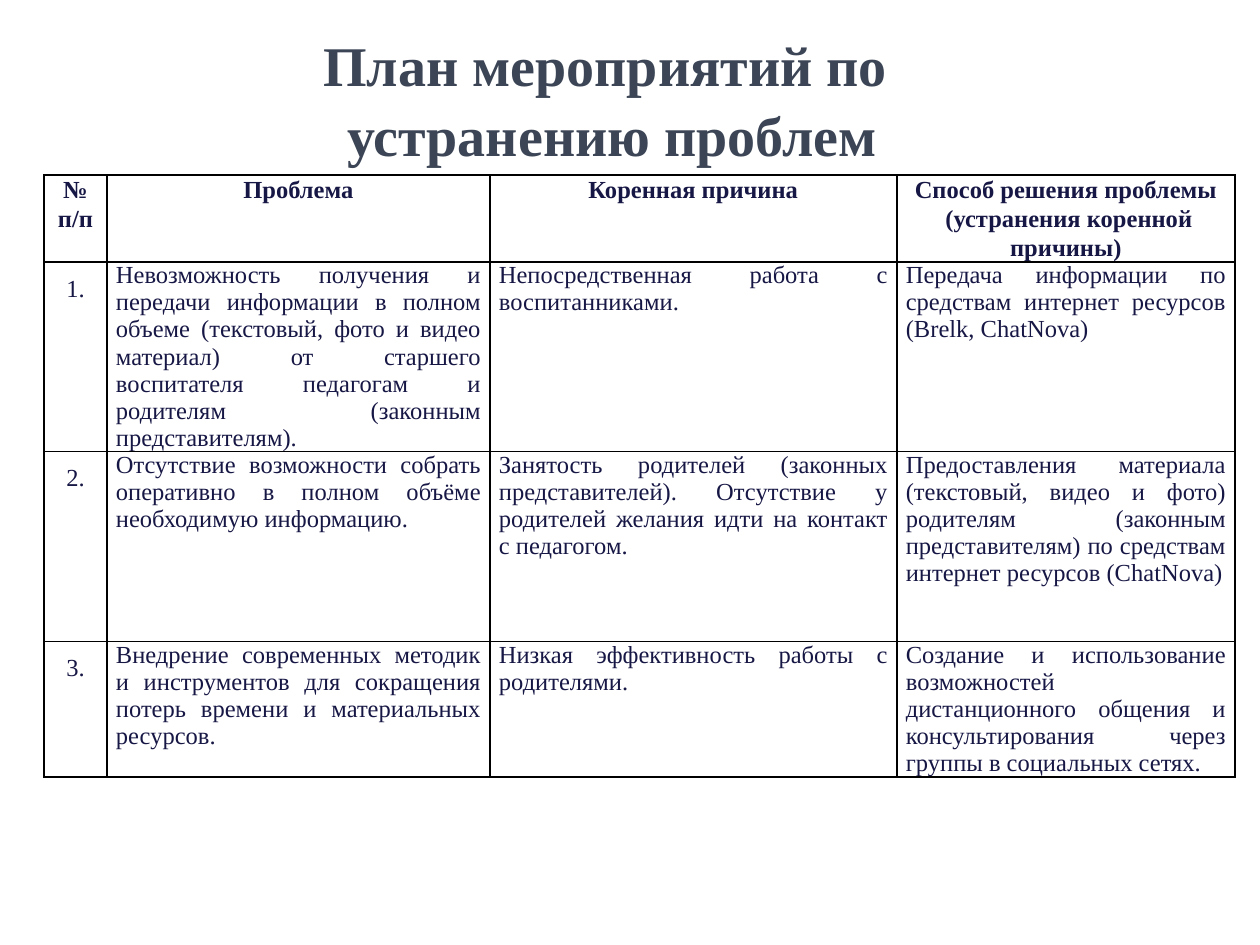
"""Build the slide with the action plan for solving problems."""
from dataclasses import dataclass

import pptx
import pptx.dml.color
import pptx.enum.text
import pptx.oxml
import pptx.oxml.ns
import pptx.util

ALIGN = pptx.enum.text.PP_ALIGN
ANCHOR = pptx.enum.text.MSO_ANCHOR
EMU_PER_PX = 914400 // 126


@dataclass(frozen=True)
class Theme:
    font: str = "Times New Roman"
    heading: str = "3B4555"
    ink: str = "171745"
    border: str = "000000"
    heading_pt: int = 32
    table_pt: int = 14
    border_pt: int = 1


@dataclass(frozen=True)
class CellStyle:
    align: ALIGN
    spacing: float
    bold: bool = False


@dataclass(frozen=True)
class Measure:
    height: int
    problem: str
    cause: str
    solution: str


THEME = Theme()
HEADER = CellStyle(ALIGN.CENTER, 1.07, True)
NUMBER = CellStyle(ALIGN.CENTER, 1.5)
BODY = CellStyle(ALIGN.JUSTIFY, 1.0)
COLUMN_WIDTHS = (63, 383, 407, 338)
HEADER_HEIGHT = 87
HEADINGS = (
    "№ п/п",
    "Проблема",
    "Коренная причина",
    "Способ решения проблемы\n (устранения коренной причины)",
)
MEASURES = (
    Measure(
        189,
        "Невозможность получения и передачи информации в полном объеме "
        "(текстовый, фото и видео материал) от старшего воспитателя "
        "педагогам и родителям (законным представителям).",
        "Непосредственная работа с воспитанниками.",
        "Передача информации по средствам интернет ресурсов (Brelk, ChatNova)",
    ),
    Measure(
        190,
        "Отсутствие возможности собрать оперативно в полном объёме "
        "необходимую информацию.",
        "Занятость родителей (законных представителей). Отсутствие у "
        "родителей желания идти на контакт с педагогом.",
        "Предоставления материала (текстовый, видео и фото) родителям "
        "(законным представителям) по средствам интернет ресурсов (ChatNova)",
    ),
    Measure(
        135,
        "Внедрение современных методик и инструментов для сокращения потерь "
        "времени и материальных ресурсов.",
        "Низкая эффективность работы с родителями.",
        "Создание и использование возможностей дистанционного общения и "
        "консультирования через группы в социальных сетях.",
    ),
)


def px(length: int) -> pptx.util.Emu:
    return pptx.util.Emu(length * EMU_PER_PX)


def add_run(paragraph, text: str, size: int, color: str, bold: bool) -> None:
    run = paragraph.add_run()
    run.text = text
    run.font.name = THEME.font
    run.font.size = pptx.util.Pt(size)
    run.font.bold = bold
    run.font.color.rgb = pptx.dml.color.RGBColor.from_string(color)


def draw_title(slide, lines: tuple[str, ...]) -> None:
    title = slide.shapes.title
    title.left, title.top, title.width, title.height = px(174), px(16), px(863), px(129)
    frame = title.text_frame
    frame.word_wrap = False
    frame.auto_size = pptx.enum.text.MSO_AUTO_SIZE.NONE
    frame.vertical_anchor = ANCHOR.TOP
    frame.margin_top, frame.margin_bottom = px(11), 0
    heading = frame.paragraphs[0]
    heading.alignment = ALIGN.CENTER
    heading.line_spacing = 1.05
    for index, line in enumerate(lines):
        if index:
            heading.add_line_break()
        add_run(heading, line, THEME.heading_pt, THEME.heading, True)


def draw_borders(cell) -> None:
    properties = cell._tc.get_or_add_tcPr()
    width = pptx.util.Pt(THEME.border_pt)
    for index, side in enumerate(("lnL", "lnR", "lnT", "lnB")):
        border = pptx.oxml.parse_xml(
            f'<a:{side} {pptx.oxml.ns.nsdecls("a")} w="{width}"><a:solidFill>'
            f'<a:srgbClr val="{THEME.border}"/></a:solidFill></a:{side}>'
        )
        properties.insert(index, border)


def fill_cell(cell, text: str, style: CellStyle) -> None:
    cell.fill.background()
    cell.margin_left = cell.margin_right = px(9)
    cell.margin_top = cell.margin_bottom = 0
    cell.vertical_anchor = ANCHOR.TOP
    frame = cell.text_frame
    for index, line in enumerate(text.split("\n")):
        paragraph = frame.add_paragraph() if index else frame.paragraphs[0]
        paragraph.alignment = style.align
        paragraph.line_spacing = style.spacing
        add_run(paragraph, line, THEME.table_pt, THEME.ink, style.bold)
    draw_borders(cell)


def draw_plan(slide) -> None:
    heights = (HEADER_HEIGHT, *(measure.height for measure in MEASURES))
    plan = slide.shapes.add_table(
        len(heights), len(COLUMN_WIDTHS),
        px(44), px(175), px(sum(COLUMN_WIDTHS)), px(sum(heights)),
    ).table
    plan.first_row = plan.horz_banding = False
    for column, width in zip(plan.columns, COLUMN_WIDTHS):
        column.width = px(width)
    for row, height in zip(plan.rows, heights):
        row.height = px(height)
    for column, heading in enumerate(HEADINGS):
        fill_cell(plan.cell(0, column), heading, HEADER)
    for row, measure in enumerate(MEASURES, start=1):
        fill_cell(plan.cell(row, 0), f"{row}.", NUMBER)
        texts = (measure.problem, measure.cause, measure.solution)
        for column, text in enumerate(texts, start=1):
            fill_cell(plan.cell(row, column), text, BODY)


def main() -> None:
    deck = pptx.Presentation()
    deck.slide_width, deck.slide_height = px(1260), px(945)
    slide = deck.slides.add_slide(deck.slide_layouts.get_by_name("Title Only"))
    draw_title(slide, ("План мероприятий по", " устранению проблем"))
    draw_plan(slide)
    deck.save("out.pptx")


if __name__ == "__main__":
    main()
